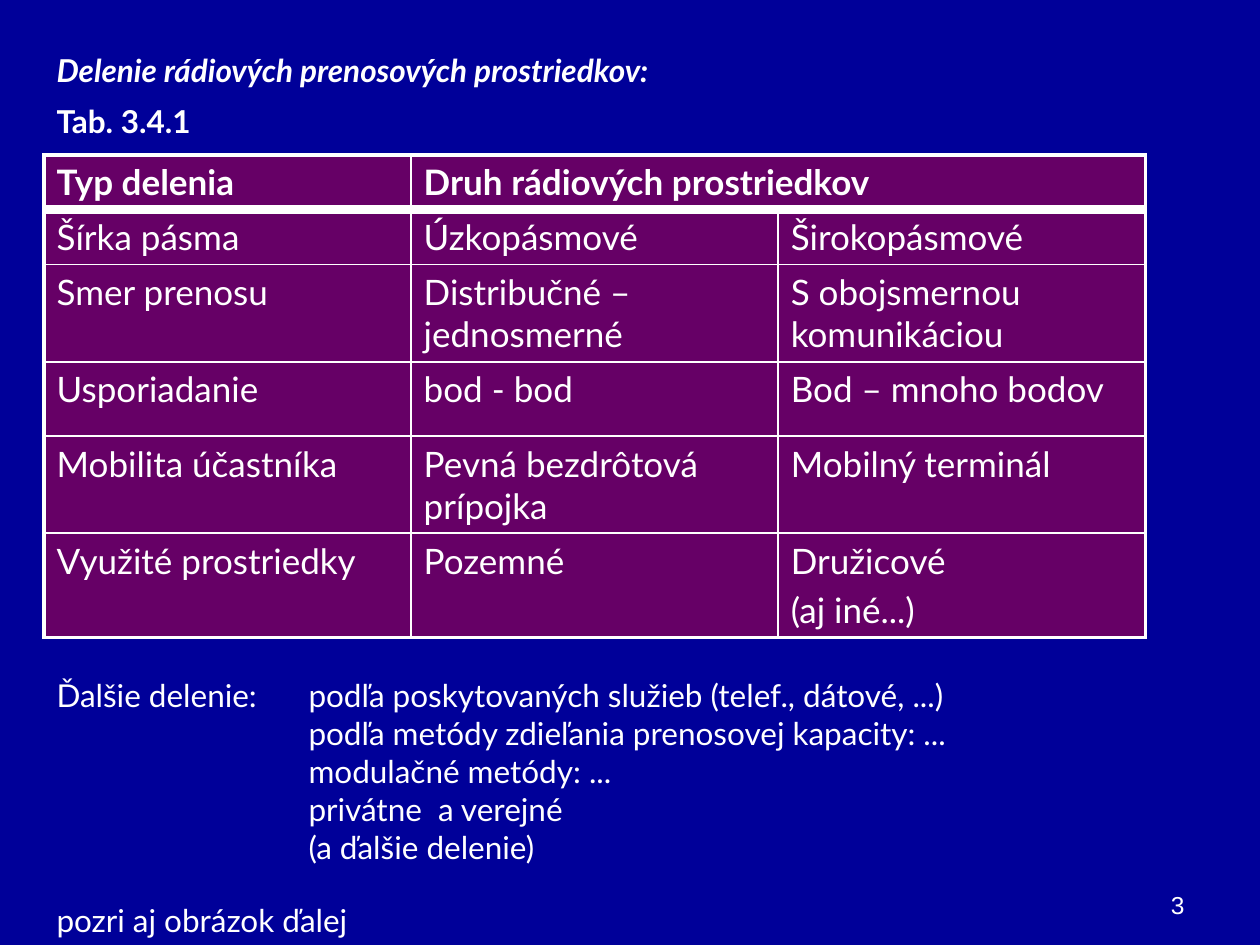
from lxml import etree
from pptx import Presentation
from pptx.dml.color import RGBColor
from pptx.enum.text import MSO_ANCHOR, PP_ALIGN
from pptx.oxml.ns import qn
from pptx.util import Inches, Pt

TOP, BOTTOM = MSO_ANCHOR.TOP, MSO_ANCHOR.BOTTOM
LEFT, RIGHT = PP_ALIGN.LEFT, PP_ALIGN.RIGHT

# Content
HEADER = ["Typ delenia", "Druh rádiových prostriedkov", ""]
ROWS = [
    ["Šírka pásma", "Úzkopásmové", "Širokopásmové"],
    ["Smer prenosu", "Distribučné – jednosmerné", "S obojsmernou komunikáciou"],
    ["Usporiadanie", "bod - bod", "Bod – mnoho bodov"],
    ["Mobilita účastníka", "Pevná bezdrôtová prípojka", "Mobilný terminál"],
    ["Využité prostriedky", "Pozemné", "Družicové\n(aj iné...)"],
]
FURTHER_DIVISION = [
    "Ďalšie delenie:\tpodľa poskytovaných služieb (telef., dátové, ...)",
    "\tpodľa metódy zdieľania prenosovej kapacity: ...",
    "\tmodulačné metódy: ...",
    "\tprivátne  a verejné",
    "\t(a ďalšie delenie)",
]

# Theme
THEME = {
    "background": RGBColor.from_string("000099"),
    "cell": RGBColor.from_string("660066"),
    "text": RGBColor.from_string("FFFFFF"),
    "border": "FFFFFF",
    "body": {"name": "Lato", "size": Pt(18)},
    "title": {"name": "Lato", "size": Pt(18), "bold": True, "italic": True},
    "caption": {"name": "Lato", "size": Pt(18), "bold": True},
    "table": {"name": "Lato", "size": Pt(20)},
    "table_header": {"name": "Lato", "size": Pt(20), "bold": True},
    "number": {"name": "Arial", "size": Pt(14)},
}
THIN, OUTER, HEADER_RULE = 1, 2.25, 6

# Layout in inches
MARGIN = 0.35
TABLE_TOP, TABLE_WIDTH = 1.23, 8.74
ROW_HEIGHTS = [0.43, 0.43, 0.77, 0.59, 0.77, 0.83]
TAB_POSITION = 2

# Text boxes: box, lines, format, alignment, anchor
TEXTS = [
    ((MARGIN, 0.36, 7.48, 0.4), ["Delenie rádiových prenosových prostriedkov:"], "title", LEFT, TOP),
    ((MARGIN, 0.76, 2.05, 0.4), ["Tab. 3.4.1"], "caption", LEFT, TOP),
    ((MARGIN, 5.32, 8.82, 1.6), FURTHER_DIVISION, "body", LEFT, TOP),
    ((MARGIN, 7.1, 8.35, 0.4), ["pozri aj obrázok ďalej"], "body", LEFT, TOP),
    ((7.17, 6.83, 2.33, 0.52), ["3"], "number", RIGHT, BOTTOM),
]


def fill_text(frame, lines, style, alignment=LEFT, space_before=0):
    for index, line in enumerate(lines):
        paragraph = frame.add_paragraph() if index else frame.paragraphs[0]
        paragraph.alignment = alignment
        if index:
            paragraph.space_before = Pt(space_before)
        if "\t" in line:
            tab_list = etree.SubElement(paragraph._p.get_or_add_pPr(), qn("a:tabLst"))
            etree.SubElement(tab_list, qn("a:tab"), pos=str(Inches(TAB_POSITION)), algn="l")
        run = paragraph.add_run()
        run.text = line
        for name, value in THEME[style].items():
            setattr(run.font, name, value)
        run.font.color.rgb = THEME["text"]


def add_text(slide, box, lines, style, alignment, anchor):
    frame = slide.shapes.add_textbox(*map(Inches, box)).text_frame
    frame.word_wrap = True
    frame.vertical_anchor = anchor
    fill_text(frame, lines, style, alignment)


def set_borders(cell, widths):
    properties = cell._tc.get_or_add_tcPr()
    for side, width in widths.items():
        line = etree.SubElement(properties, qn(f"a:ln{side}"), w=str(Pt(width)))
        fill = etree.SubElement(line, qn("a:solidFill"))
        etree.SubElement(fill, qn("a:srgbClr"), val=THEME["border"])


def add_division_table(slide):
    contents = [HEADER] + ROWS
    last_row, last_column = len(contents) - 1, len(HEADER) - 1
    table = slide.shapes.add_table(
        len(contents), len(HEADER), Inches(MARGIN), Inches(TABLE_TOP),
        Inches(TABLE_WIDTH), Inches(sum(ROW_HEIGHTS))).table
    table.first_row = table.horz_banding = False
    for row, height in zip(table.rows, ROW_HEIGHTS):
        row.height = Inches(height)
    table.cell(0, 1).merge(table.cell(0, last_column))

    for r, row in enumerate(contents):
        for c, text in enumerate(row):
            cell = table.cell(r, c)
            set_borders(cell, {
                "L": OUTER if c == 0 else THIN,
                "R": OUTER if c == last_column or cell.is_merge_origin else THIN,
                "T": {0: OUTER, 1: HEADER_RULE}.get(r, THIN),
                "B": {0: HEADER_RULE, last_row: OUTER}.get(r, THIN),
            })
            cell.fill.solid()
            cell.fill.fore_color.rgb = THEME["cell"]
            if text:
                style = "table" if r else "table_header"
                fill_text(cell.text_frame, text.split("\n"), style, space_before=4)


def main():
    presentation = Presentation()
    presentation.slide_width, presentation.slide_height = Inches(10), Inches(7.5)
    slide = presentation.slides.add_slide(presentation.slide_layouts[6])
    slide.background.fill.solid()
    slide.background.fill.fore_color.rgb = THEME["background"]
    add_division_table(slide)
    for text in TEXTS:
        add_text(slide, *text)
    presentation.save("out.pptx")


if __name__ == "__main__":
    main()
